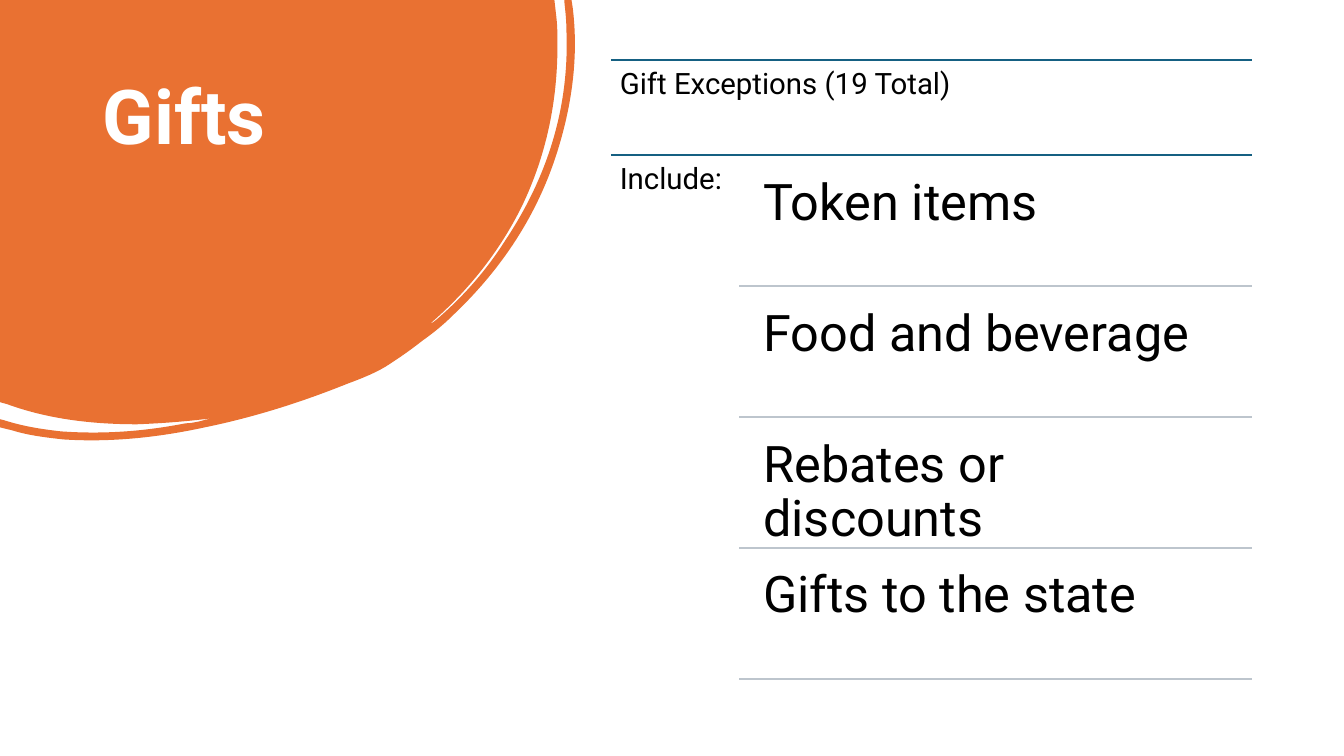
from lxml import etree
from pptx import Presentation
from pptx.dml.color import RGBColor
from pptx.enum.shapes import MSO_CONNECTOR
from pptx.enum.text import MSO_ANCHOR
from pptx.oxml.ns import qn
from pptx.util import Pt

STRAIGHT = MSO_CONNECTOR.STRAIGHT
TOP = MSO_ANCHOR.TOP

TITLE = "Gifts"
HEADS = [("Gift Exceptions (19 Total)", 43, 265.7, 68.4),
         ("Include:", 111, 91.6, 378.7)]
ITEMS = ["Token items", "Food and beverage", "Rebates or discounts",
         "Gifts to the state"]

FONT = "Roboto"
ORANGE, BLUE, GREY = "E97132", "156082", "BDC5CD"
WHITE, BLACK = "FFFFFF", "000000"
LEFT, INNER, RIGHT = 436.4, 527.9, 894
INDENT = 6.6
FIRST, PITCH, ROW = 115.4, 93.5, 89.1
GRAIN = 100

BLOB = [
    (0, 0), (396, 0), (397.4, 12.2),
    (398.2, 18.7, 398.2, 25.9, 398.2, 32.4),
    (398.2, 72.7, 390.2, 110.9, 373, 146.9),
    (357.1, 179.3, 334.8, 207.4, 307.4, 231.1),
    (308.9, 231.1, 309.6, 229.7, 311, 229),
    (330.5, 212.4, 347, 193.7, 360.7, 172.1),
    (391, 126.7, 406.8, 77, 404.6, 21.6),
    (404.6, 15.1, 403.9, 8.6, 403.2, 2.2),
    (403.2, 0), (408.2, 0), (409, 5),
    (413.3, 38.9, 409, 73.4, 398.2, 108),
    (383.8, 154.1, 357.8, 193, 322.6, 226.1),
    (316.1, 232.6, 308.9, 238.3, 301.7, 243.4),
    (294.5, 249.1, 287.3, 254.2, 278.6, 259.9),
    (270, 265.7, 259.2, 270, 247.7, 274.3),
    (215.3, 287.3, 181.4, 298.1, 146.2, 305.3),
    (113, 312.5, 79.2, 316.1, 45.4, 313.9),
    (32.4, 312.5, 20.2, 311, 8.6, 307.4),
    (0, 305.3), (0, 299.5), (2.9, 300.2),
    (16.6, 304.6, 30.2, 306.7, 43.9, 308.2),
    (74.2, 310.3, 103, 308.2, 132.5, 302.4),
    (136.1, 302.4, 139, 301.7, 142.6, 301),
    (145.4, 300.2, 148.3, 299.5, 151.2, 298.8),
    (133.9, 301, 115.9, 302.4, 97.9, 303.1),
    (66.2, 303.1, 34.6, 299.5, 5, 288.7),
    (0, 287.3),
]


def color(code):
    return RGBColor.from_string(code)


def bend(step, part):
    step.tag = qn("a:cubicBezTo")
    for i in (0, 2):
        dot = etree.Element(qn("a:pt"))
        for key, val in zip("xy", part[i:i + 2]):
            dot.set(key, str(round(val * GRAIN)))
        step.insert(i // 2, dot)


def blob(slide):
    dots = [tuple(v * GRAIN for v in part[-2:]) for part in BLOB]
    form = slide.shapes.build_freeform(*dots[0], scale=Pt(1) / GRAIN)
    form.add_line_segments(dots[1:], close=True)
    shape = form.convert_to_shape()
    steps = list(shape._element.iter(qn("a:lnTo")))
    for step, part in zip(steps, BLOB[1:]):
        if len(part) == 6:
            bend(step, part)
    shape.shadow.inherit = False
    shape.fill.solid()
    shape.fill.fore_color.rgb = color(ORANGE)
    shape.line.fill.background()


def rule(slide, x, y, code):
    line = slide.shapes.add_connector(STRAIGHT, Pt(x), Pt(y), Pt(RIGHT), Pt(y))
    line.line.color.rgb = color(code)
    line.line.width = Pt(1.5)
    etree.SubElement(line._element.spPr, qn("a:effectLst"))


def label(slide, text, box, size, pad, code=BLACK, bold=False):
    frame = slide.shapes.add_textbox(*map(Pt, box)).text_frame
    side, edge = map(Pt, pad)
    look = {"word_wrap": True, "vertical_anchor": TOP,
            "margin_left": side, "margin_right": side,
            "margin_top": edge, "margin_bottom": edge}
    for key, val in look.items():
        setattr(frame, key, val)
    para = frame.paragraphs[0]
    para.line_spacing = 0.9
    run = para.add_run()
    run.text = text
    for key, val in {"name": FONT, "size": Pt(size), "bold": bold}.items():
        setattr(run.font, key, val)
    run.font.color.rgb = color(code)


def main():
    deck = Presentation()
    deck.slide_width, deck.slide_height = Pt(960), Pt(540)
    slide = deck.slides.add_slide(deck.slide_layouts[6])
    blob(slide)
    label(slide, TITLE, (66.2, 53.3, 253.4, 159.8), 54, (7.2, 3.6), WHITE, True)
    for text, y, wide, high in HEADS:
        rule(slide, LEFT, y, BLUE)
        label(slide, text, (LEFT, y, wide, high), 21, (6.3, 6.3))
    x = INNER + INDENT
    for i, text in enumerate(ITEMS):
        y = FIRST + i * PITCH
        label(slide, text, (x, y, RIGHT - x, ROW), 36, (10.8, 10.8))
        rule(slide, INNER, y + ROW, GREY)
    deck.save("out.pptx")


if __name__ == "__main__":
    main()
